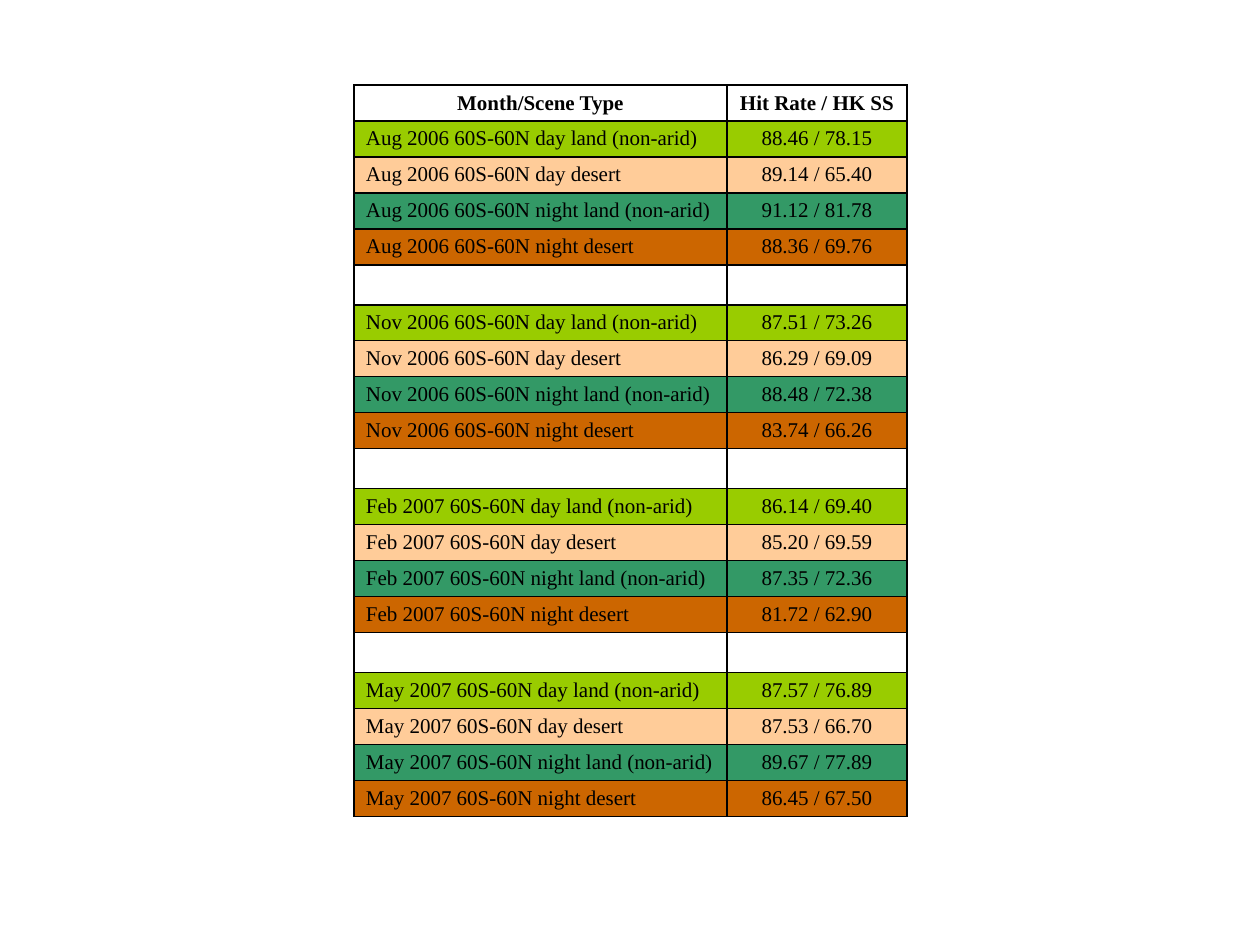
from pptx import Presentation
from pptx.dml.color import RGBColor as RGB
from pptx.enum.text import MSO_ANCHOR as Anchor, PP_ALIGN as Align
from pptx.oxml import parse_xml
from pptx.oxml.ns import nsdecls
from pptx.util import Emu, Pt

# Content
HEAD = ("Month/Scene Type", "Hit Rate / HK SS")
SCENES = ("day land (non-arid)", "day desert",
          "night land (non-arid)", "night desert")
SCORES = {
    "Aug 2006": ("88.46 / 78.15", "89.14 / 65.40",
                 "91.12 / 81.78", "88.36 / 69.76"),
    "Nov 2006": ("87.51 / 73.26", "86.29 / 69.09",
                 "88.48 / 72.38", "83.74 / 66.26"),
    "Feb 2007": ("86.14 / 69.40", "85.20 / 69.59",
                 "87.35 / 72.36", "81.72 / 62.90"),
    "May 2007": ("87.57 / 76.89", "87.53 / 66.70",
                 "89.67 / 77.89", "86.45 / 67.50"),
}

THEME = {
    "font": "Times New Roman", "size": 12, "line": 1,
    "ink": "000000", "plain": "FFFFFF",
    "scenes": ("99CC00", "FFCC99", "339966", "CC6600"),
}

# Geometry in px, 126 to the inch
LEFT, TOP = 354, 85
COLS = (373, 180)
ROW, GAP = 36, 40
PAD, INSET = 6, 12


def px(n):
    return Emu(round(n * 914400 / 126))


def list_rows():
    """Rows as (texts, fill); a row without texts parts two months."""
    rows = [(HEAD, THEME["plain"])]
    for i, (month, scores) in enumerate(SCORES.items()):
        if i:
            rows.append((None, THEME["plain"]))
        for scene, score, fill in zip(SCENES, scores, THEME["scenes"]):
            rows.append(((f"{month} 60S-60N {scene}", score), fill))
    return rows


def add_border(cell):
    props = cell._tc.get_or_add_tcPr()
    for side in "LRTB":
        props.append(parse_xml(
            f'<a:ln{side} {nsdecls("a")} w="{Pt(THEME["line"])}"><a:solidFill>'
            f'<a:srgbClr val="{THEME["ink"]}"/></a:solidFill></a:ln{side}>'))


def set_text(cell, text, bold, center):
    para = cell.text_frame.paragraphs[0]
    para.alignment = Align.CENTER if center else Align.LEFT
    run = para.add_run()
    run.text = text
    style = {"name": THEME["font"], "size": Pt(THEME["size"]), "bold": bold}
    for key, value in style.items():
        setattr(run.font, key, value)
    run.font.color.rgb = RGB.from_string(THEME["ink"])


def fill_cell(cell, text, fill, bold, center):
    add_border(cell)
    cell.fill.solid()
    cell.fill.fore_color.rgb = RGB.from_string(fill)
    style = {
        "vertical_anchor": Anchor.MIDDLE,
        "margin_left": px(PAD if center else INSET), "margin_right": px(PAD),
        "margin_top": 0, "margin_bottom": 0,
    }
    for key, value in style.items():
        setattr(cell, key, value)
    if text:
        set_text(cell, text, bold, center)


def main():
    deck = Presentation()
    deck.slide_width, deck.slide_height = px(1260), px(945)
    slide = deck.slides.add_slide(deck.slide_layouts[6])

    # Table frame
    rows = list_rows()
    highs = [ROW if texts else GAP for texts, _ in rows]
    table = slide.shapes.add_table(
        len(rows), len(COLS), px(LEFT), px(TOP),
        px(sum(COLS)), px(sum(highs))).table
    table.horz_banding = False
    for col, wide in zip(table.columns, COLS):
        col.width = px(wide)

    # Cells
    for r, (texts, fill) in enumerate(rows):
        table.rows[r].height = px(highs[r])
        for c, text in enumerate(texts or ("", "")):
            fill_cell(table.cell(r, c), text, fill,
                      bold=r == 0, center=r == 0 or c == 1)

    deck.save("out.pptx")


if __name__ == "__main__":
    main()
